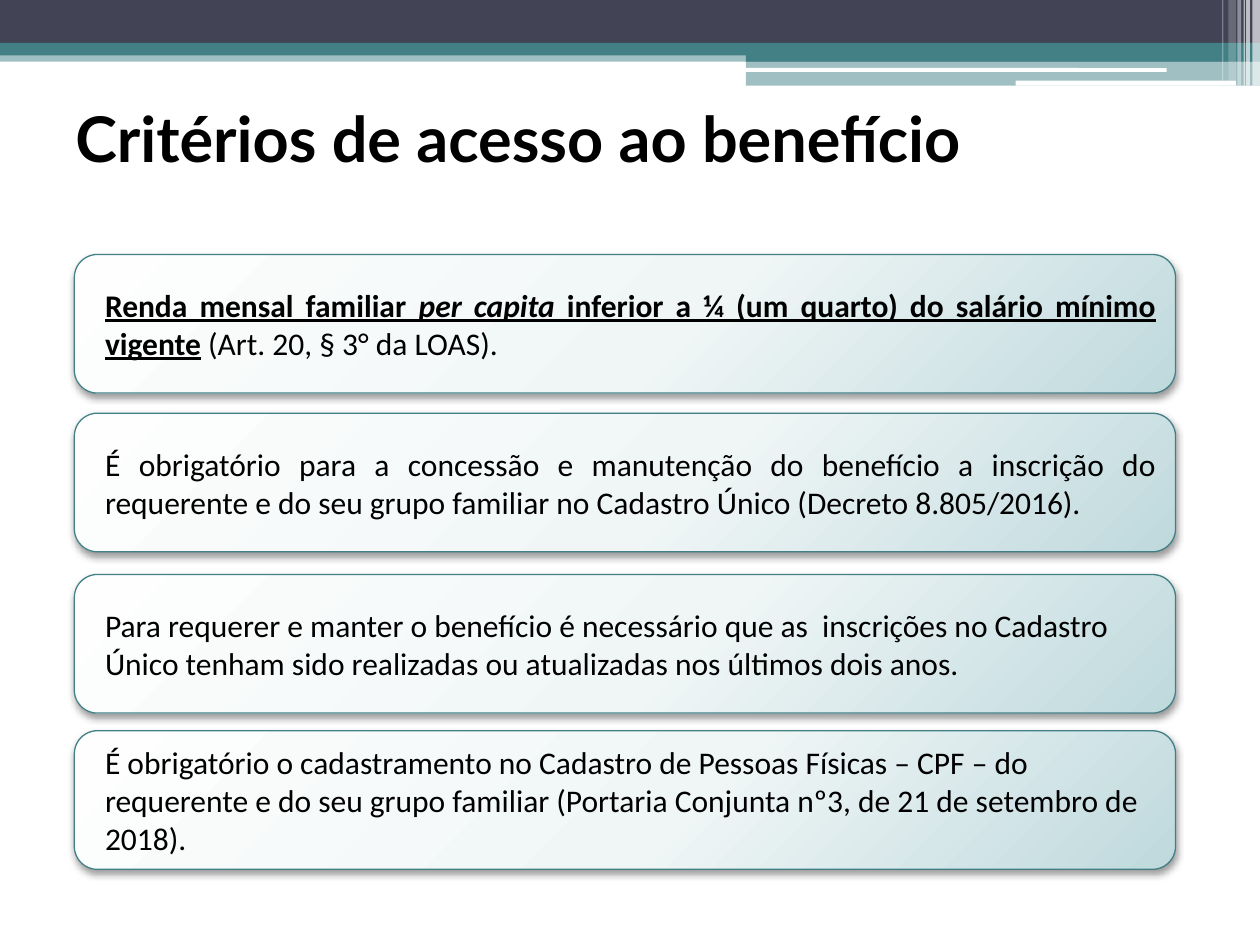
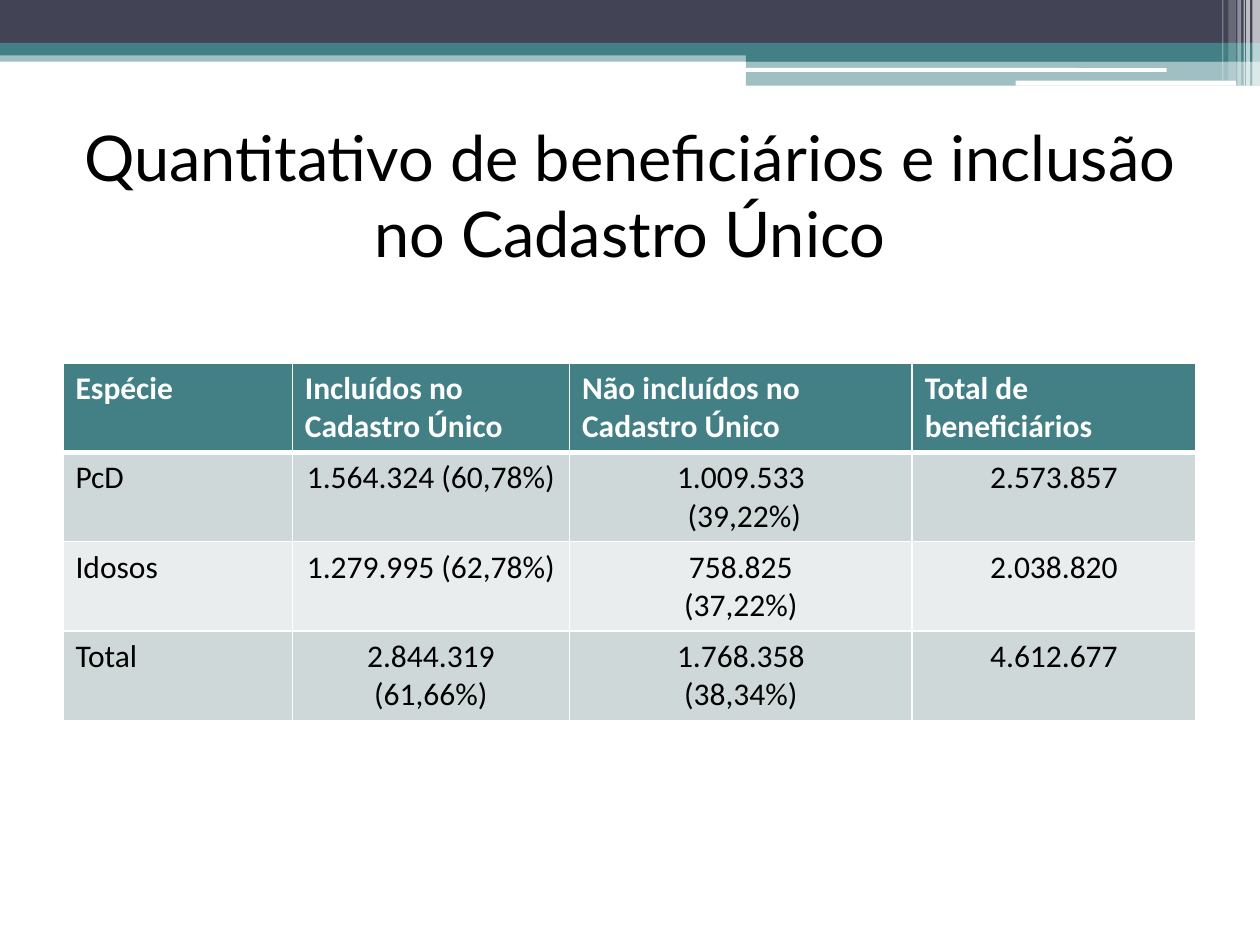
from dataclasses import dataclass

from pptx import Presentation
from pptx.dml.color import RGBColor
from pptx.enum.shapes import MSO_SHAPE as Preset
from pptx.enum.text import MSO_ANCHOR as Anchor, PP_ALIGN as Align
from pptx.oxml import parse_xml
from pptx.oxml.ns import nsdecls, qn
from pptx.slide import Slide
from pptx.util import Inches, Pt

COLORS = {
    "navy": "424456",
    "teal": "438086",
    "white": "FFFFFF",
    "black": "000000",
    "row_dark": "CFD8D9",
    "row_light": "E9EDED",
    "card_start": "FEFEFE",
    "card_middle": "F0F6F6",
    "card_end": "BFD9DD",
}
TITLE_FONT = "Lato"
BODY_FONT = "Calibri"


@dataclass(frozen=True)
class Band:
    left: float
    top: float
    width: float
    height: float
    color: str
    opacity: int = 100
    rounded: bool = False


@dataclass(frozen=True)
class Span:
    text: str
    bold: bool = False
    italic: bool = False
    underline: bool = False


@dataclass(frozen=True)
class Card:
    top: float
    spans: tuple[Span, ...]
    align: Align = Align.LEFT


BANDS = (
    Band(0, 0.4, 10, 0.09, "teal", 50),
    Band(0, 0, 10, 0.34, "navy"),
    Band(0, 0.34, 10, 0.1, "teal"),
    Band(5.92, 0.39, 4.08, 0.1, "teal"),
    Band(5.92, 0.48, 4.08, 0.2, "teal", 50),
    Band(5.91, 0.54, 3.35, 0.03, "white", rounded=True),
    Band(8.06, 0.64, 1.75, 0.04, "white", rounded=True),
    # Thin vertical stripes in the corner
    Band(9.94, 0, 0.06, 0.68, "white", 65),
    Band(9.89, 0, 0.03, 0.68, "white", 65),
    Band(9.87, 0, 0.01, 0.68, "white", 60),
    Band(9.82, 0, 0.03, 0.68, "white", 40),
    Band(9.75, 0, 0.06, 0.64, "white", 20),
    Band(9.7, 0, 0.01, 0.64, "white", 30),
)

CARDS = (
    Card(2.02, (
        Span("Renda mensal familiar ", bold=True, underline=True),
        Span("per capita", bold=True, italic=True, underline=True),
        Span(" inferior a ¼ (um quarto) do salário mínimo vigente", bold=True, underline=True),
        Span(" (Art. 20, § 3° da LOAS)."),
    ), Align.JUSTIFY),
    Card(3.28, (Span(
        "É obrigatório para a concessão e manutenção do benefício a inscrição do "
        "requerente e do seu grupo familiar no Cadastro Único (Decreto 8.805/2016)."
    ),), Align.JUSTIFY),
    Card(4.56, (Span(
        "Para requerer e manter o benefício é necessário que as  inscrições no Cadastro "
        "Único tenham sido realizadas ou atualizadas nos últimos dois anos."
    ),)),
    Card(5.8, (Span(
        "É obrigatório o cadastramento no Cadastro de Pessoas Físicas – CPF – do "
        "requerente e do seu grupo familiar (Portaria Conjunta nº3, de 21 de setembro "
        "de 2018)."
    ),)),
)

COLUMN_WIDTHS = (1.82, 2.2, 2.72, 2.25)
ROW_HEIGHT = 0.71
TABLE_ROWS = (
    ("Espécie", "Incluídos no Cadastro Único", "Não incluídos no Cadastro Único",
     "Total de beneficiários"),
    ("PcD", "1.564.324 (60,78%)", "1.009.533\n (39,22%)", "2.573.857"),
    ("Idosos", "1.279.995 (62,78%)", "758.825\n(37,22%)", "2.038.820"),
    ("Total", "2.844.319\n(61,66%)", "1.768.358\n(38,34%)", "4.612.677"),
)


def rgb(name: str) -> RGBColor:
    return RGBColor.from_string(COLORS[name])


def style_font(font, name: str, size: int, color: str, bold: bool | None = None) -> None:
    font.name, font.size, font.bold = name, Pt(size), bold
    font.color.rgb = rgb(color)


def add_band(page: Slide, band: Band) -> None:
    preset = Preset.ROUNDED_RECTANGLE if band.rounded else Preset.RECTANGLE
    shape = page.shapes.add_shape(
        preset, Inches(band.left), Inches(band.top), Inches(band.width), Inches(band.height))
    shape.shadow.inherit = False
    shape.fill.solid()
    shape.fill.fore_color.rgb = rgb(band.color)
    shape.line.fill.background()
    if band.opacity < 100:
        color = shape._element.spPr.find(".//" + qn("a:srgbClr"))
        color.append(parse_xml(f'<a:alpha {nsdecls("a")} val="{band.opacity * 1000}"/>'))


def add_page(deck) -> Slide:
    page = deck.slides.add_slide(deck.slide_layouts[6])
    for band in BANDS:
        add_band(page, band)
    return page


def add_title(page: Slide, text: str, top: float, height: float,
              align: Align = Align.LEFT, bold: bool = False) -> None:
    box = page.shapes.add_textbox(Inches(0.5), Inches(top), Inches(9), Inches(height))
    frame = box.text_frame
    frame.word_wrap = True
    frame.vertical_anchor = Anchor.MIDDLE
    frame.text = text
    para = frame.paragraphs[0]
    para.alignment = align
    style_font(para.font, TITLE_FONT, 36, "black", bold)


def style_card(shape) -> None:
    """Give the card its radial gradient, thin outline and soft shadow."""
    shape.line.color.rgb = rgb("teal")
    shape.line.width = Pt(0.75)
    shape.fill.background()
    properties = shape._element.spPr
    stops = "".join(
        f'<a:gs pos="{position * 1000}"><a:srgbClr val="{COLORS[name]}"/></a:gs>'
        for position, name in ((0, "card_start"), (55, "card_middle"), (100, "card_end")))
    gradient = parse_xml(
        f'<a:gradFill {nsdecls("a")} rotWithShape="1"><a:gsLst>{stops}</a:gsLst>'
        '<a:path path="circle"><a:fillToRect l="-40000" t="-90000" r="140000" b="190000"/>'
        '</a:path></a:gradFill>')
    properties.replace(properties.find(qn("a:noFill")), gradient)
    properties.append(parse_xml(
        f'<a:effectLst {nsdecls("a")}>'
        f'<a:outerShdw blurRad="{Pt(4.1)}" dist="{Pt(2)}" dir="5400000" rotWithShape="0">'
        f'<a:srgbClr val="{COLORS["black"]}"><a:alpha val="40000"/></a:srgbClr>'
        '</a:outerShdw></a:effectLst>'))


def add_card(page: Slide, card: Card) -> None:
    shape = page.shapes.add_shape(
        Preset.ROUNDED_RECTANGLE, Inches(0.59), Inches(card.top), Inches(8.74), Inches(1.1))
    style_card(shape)
    frame = shape.text_frame
    frame.word_wrap = True
    frame.vertical_anchor = Anchor.MIDDLE
    frame.margin_left = Inches(0.19)
    para = frame.paragraphs[0]
    para.alignment = card.align
    style_font(para.font, BODY_FONT, 18, "black")
    for span in card.spans:
        run = para.add_run()
        run.text = span.text
        run.font.bold = span.bold
        run.font.italic = span.italic
        run.font.underline = span.underline


def add_borders(cell, bottom_width: int) -> None:
    properties = cell._tc.get_or_add_tcPr()
    widths = {"lnL": 1, "lnR": 1, "lnT": 1, "lnB": bottom_width}
    for index, (side, width) in enumerate(widths.items()):
        properties.insert(index, parse_xml(
            f'<a:{side} {nsdecls("a")} w="{Pt(width)}"><a:solidFill>'
            f'<a:srgbClr val="{COLORS["white"]}"/></a:solidFill></a:{side}>'))


def add_beneficiary_table(page: Slide) -> None:
    table = page.shapes.add_table(
        len(TABLE_ROWS), len(COLUMN_WIDTHS), Inches(0.5), Inches(2.88),
        Inches(sum(COLUMN_WIDTHS)), Inches(ROW_HEIGHT * len(TABLE_ROWS))).table
    for column, width in zip(table.columns, COLUMN_WIDTHS):
        column.width = Inches(width)
    for row_index, values in enumerate(TABLE_ROWS):
        table.rows[row_index].height = Inches(ROW_HEIGHT)
        header = row_index == 0
        fill = "teal" if header else ("row_light", "row_dark")[row_index % 2]
        for column_index, value in enumerate(values):
            cell = table.cell(row_index, column_index)
            cell.text = value
            cell.fill.solid()
            cell.fill.fore_color.rgb = rgb(fill)
            add_borders(cell, 3 if header else 1)
            for para in cell.text_frame.paragraphs:
                para.alignment = Align.LEFT if header or column_index == 0 else Align.CENTER
                style_font(para.font, BODY_FONT, 18, "white" if header else "black", header)


def main() -> None:
    deck = Presentation()
    deck.slide_width, deck.slide_height = Inches(10), Inches(7.5)

    # Access criteria
    page = add_page(deck)
    add_title(page, "Critérios de acesso ao benefício", 0.74, 0.7, bold=True)
    for card in CARDS:
        add_card(page, card)

    # Beneficiary numbers
    page = add_page(deck)
    add_title(page, "Quantitativo de beneficiários e inclusão no Cadastro Único",
              0.94, 1.2, Align.CENTER)
    add_beneficiary_table(page)

    deck.save("out.pptx")


if __name__ == "__main__":
    main()
